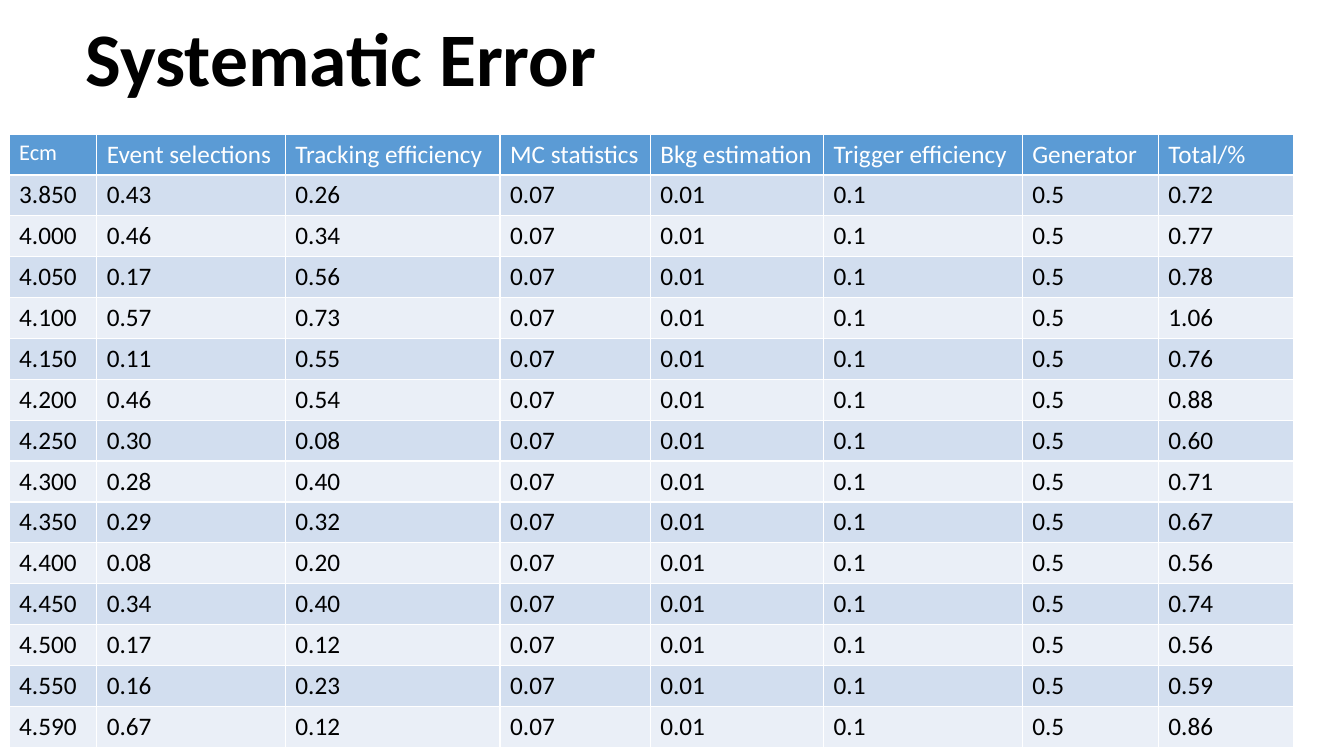
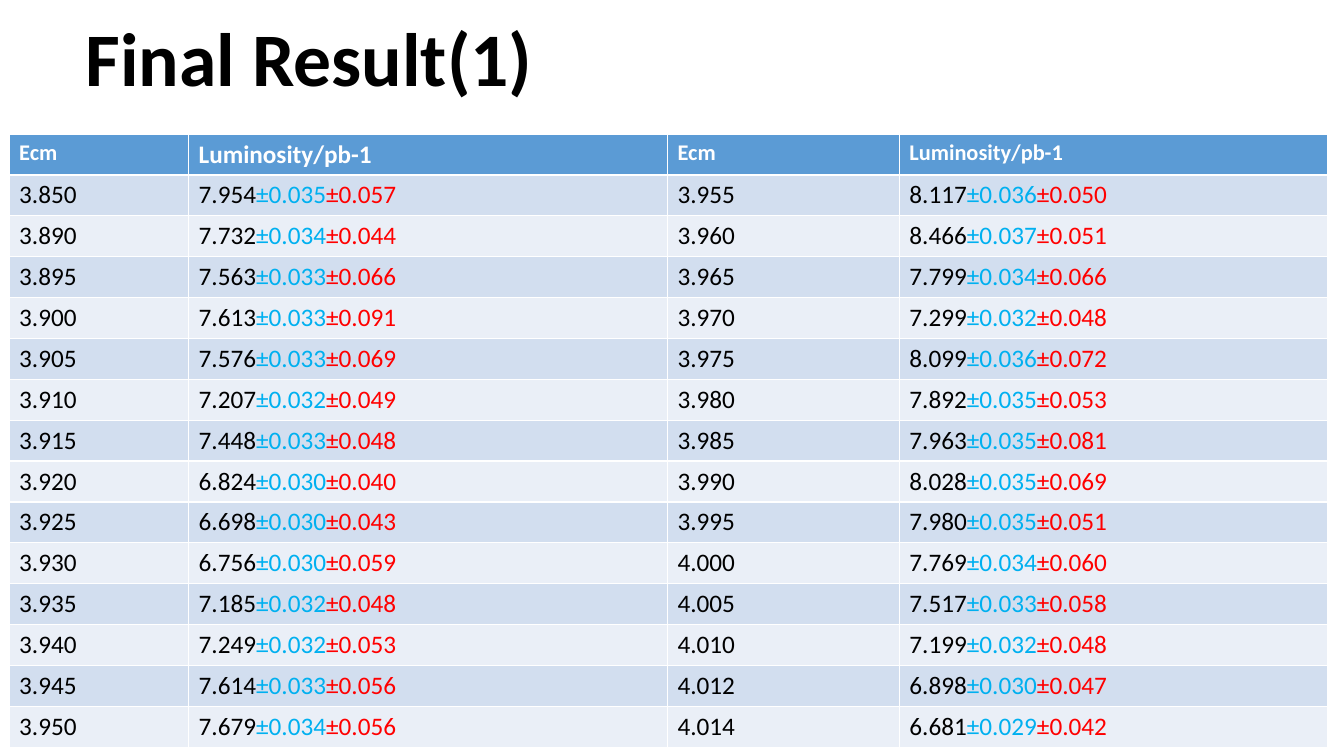
import pptx
import pptx.dml.color
import pptx.enum.text
import pptx.util

Inches, Pt = pptx.util.Inches, pptx.util.Pt
RGBColor = pptx.dml.color.RGBColor

WHITE = RGBColor(0xFF, 0xFF, 0xFF)
BLACK = RGBColor(0x00, 0x00, 0x00)
HEADER = RGBColor(0x5B, 0x9B, 0xD5)
BANDS = (RGBColor(0xD2, 0xDE, 0xEF), RGBColor(0xEA, 0xEF, 0xF7))
STAT_ERROR = RGBColor(0x00, 0xB0, 0xF0)
SYS_ERROR = RGBColor(0xFF, 0x00, 0x00)
VALUE_COLORS = (BLACK, STAT_ERROR, SYS_ERROR)

FONT = "Calibri"
TITLE_BOX = (0.75, 0.07, 11.5, 1.1)
TABLE_LEFT, TABLE_TOP, ROW_HEIGHT = 0.09, 1.33, 0.4
COMMON_ERRORS = ("0.07", "0.01", "0.1", "0.5")

ERRORS = [
    ("3.850", "0.43", "0.26", "0.72"),
    ("4.000", "0.46", "0.34", "0.77"),
    ("4.050", "0.17", "0.56", "0.78"),
    ("4.100", "0.57", "0.73", "1.06"),
    ("4.150", "0.11", "0.55", "0.76"),
    ("4.200", "0.46", "0.54", "0.88"),
    ("4.250", "0.30", "0.08", "0.60"),
    ("4.300", "0.28", "0.40", "0.71"),
    ("4.350", "0.29", "0.32", "0.67"),
    ("4.400", "0.08", "0.20", "0.56"),
    ("4.450", "0.34", "0.40", "0.74"),
    ("4.500", "0.17", "0.12", "0.56"),
    ("4.550", "0.16", "0.23", "0.59"),
    ("4.590", "0.67", "0.12", "0.86"),
]

LUMINOSITIES = [
    ("3.850", "7.954±0.035±0.057", "3.955", "8.117±0.036±0.050"),
    ("3.890", "7.732±0.034±0.044", "3.960", "8.466±0.037±0.051"),
    ("3.895", "7.563±0.033±0.066", "3.965", "7.799±0.034±0.066"),
    ("3.900", "7.613±0.033±0.091", "3.970", "7.299±0.032±0.048"),
    ("3.905", "7.576±0.033±0.069", "3.975", "8.099±0.036±0.072"),
    ("3.910", "7.207±0.032±0.049", "3.980", "7.892±0.035±0.053"),
    ("3.915", "7.448±0.033±0.048", "3.985", "7.963±0.035±0.081"),
    ("3.920", "6.824±0.030±0.040", "3.990", "8.028±0.035±0.069"),
    ("3.925", "6.698±0.030±0.043", "3.995", "7.980±0.035±0.051"),
    ("3.930", "6.756±0.030±0.059", "4.000", "7.769±0.034±0.060"),
    ("3.935", "7.185±0.032±0.048", "4.005", "7.517±0.033±0.058"),
    ("3.940", "7.249±0.032±0.053", "4.010", "7.199±0.032±0.048"),
    ("3.945", "7.614±0.033±0.056", "4.012", "6.898±0.030±0.047"),
    ("3.950", "7.679±0.034±0.056", "4.014", "6.681±0.029±0.042"),
]

SLIDES = [
    {
        "title": "Systematic Error",
        "header": [("Ecm", 16), ("Event selections", 18), ("Tracking efficiency", 18),
                   ("MC statistics", 18), ("Bkg estimation", 18),
                   ("Trigger efficiency", 18), ("Generator", 18), ("Total/%", 18)],
        "header_bold": False,
        "widths": (0.87, 1.87, 2.13, 1.49, 1.72, 1.97, 1.35, 1.34),
        "rows": [(*row[:3], *COMMON_ERRORS, row[3]) for row in ERRORS],
    },
    {
        "title": "Final Result(1)",
        "header": [("Ecm", 16), ("Luminosity/pb-1", 18), ("Ecm", 16), ("Luminosity/pb-1", 16)],
        "header_bold": True,
        "widths": (1.78, 4.75, 2.3, 4.25),
        "rows": LUMINOSITIES,
    },
]


def add_run(p, text, size, color, bold):
    r = p.add_run()
    r.text = text
    for name, value in {"name": FONT, "size": Pt(size), "bold": bold}.items():
        setattr(r.font, name, value)
    r.font.color.rgb = color


def set_title_layout(layout):
    sp = layout.placeholders[0]
    for name, value in zip(("left", "top", "width", "height"), TITLE_BOX):
        setattr(sp, name, Inches(value))


def set_title(slide, text):
    tf = slide.shapes.title.text_frame
    tf.auto_size = pptx.enum.text.MSO_AUTO_SIZE.NONE
    tf.vertical_anchor = pptx.enum.text.MSO_ANCHOR.MIDDLE
    p = tf.paragraphs[0]
    p.alignment = pptx.enum.text.PP_ALIGN.LEFT
    p.line_spacing = 0.9
    add_run(p, text, 54, BLACK, True)


def fill_cell(cell, color):
    cell.fill.solid()
    cell.fill.fore_color.rgb = color
    return cell.text_frame.paragraphs[0]


def add_data_table(slide, header, header_bold, widths, rows):
    count = len(rows) + 1
    table = slide.shapes.add_table(
        count, len(widths), Inches(TABLE_LEFT), Inches(TABLE_TOP),
        Inches(sum(widths)), Inches(ROW_HEIGHT * count)).table
    for column, width in zip(table.columns, widths):
        column.width = Inches(width)
    for j, (text, size) in enumerate(header):
        add_run(fill_cell(table.cell(0, j), HEADER), text, size, WHITE, header_bold)
    for i, row in enumerate(rows):
        for j, text in enumerate(row):
            p = fill_cell(table.cell(i + 1, j), BANDS[i % 2])
            value, *errors = text.split("±")
            parts = [value] + ["±" + error for error in errors]
            for part, color in zip(parts, VALUE_COLORS):
                add_run(p, part, 18, color, False)


def main():
    prs = pptx.Presentation()
    prs.slide_width, prs.slide_height = Inches(13.33), Inches(7.5)
    layout = prs.slide_layouts.get_by_name("Title Only")
    set_title_layout(layout)
    for content in SLIDES:
        slide = prs.slides.add_slide(layout)
        set_title(slide, content["title"])
        add_data_table(slide, content["header"], content["header_bold"],
                       content["widths"], content["rows"])
    prs.save("out.pptx")


if __name__ == "__main__":
    main()
